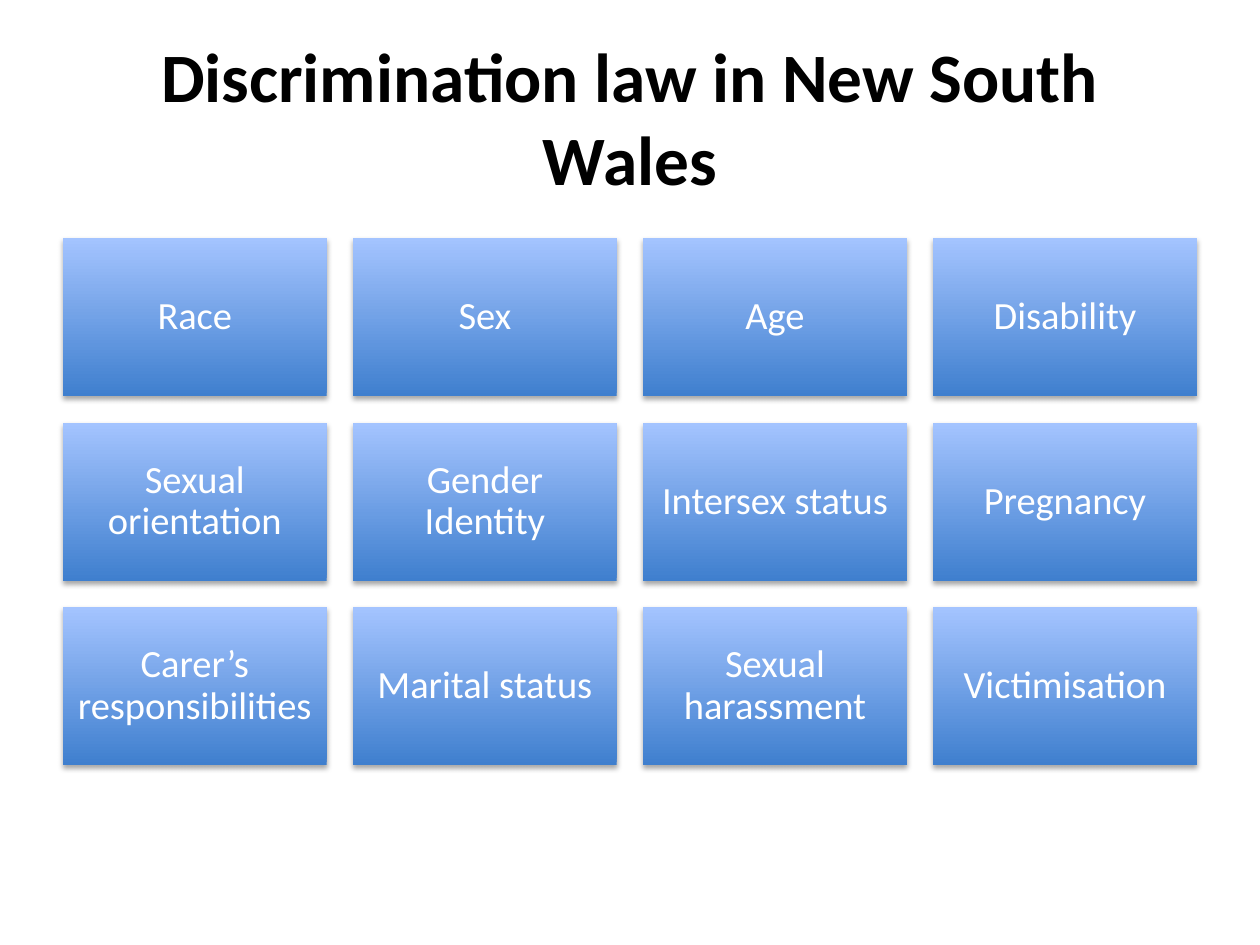
import pptx
import pptx.dml.color
import pptx.enum.shapes
import pptx.enum.text
import pptx.util
from lxml import etree

TITLE = "Discrimination law in New South Wales"
GROUNDS = [
    ["Race", "Sex", "Age", "Disability"],
    ["Sexual orientation", "Gender Identity", "Intersex status", "Pregnancy"],
    ["Carer’s responsibilities", "Marital status", "Sexual harassment", "Victimisation"],
]
COLORS = {"title": "000000", "tile_text": "FFFFFF", "bottom": "3F7FCE", "top": "A4C4FF", "shadow": "000000"}
TITLE_FONT = {"name": "Calibri", "size": pptx.util.Pt(39.6), "bold": True}
TILE_FONT = {"name": "Calibri", "size": pptx.util.Pt(22), "bold": False}
TITLE_PARA = {"alignment": pptx.enum.text.PP_ALIGN.CENTER}
TILE_PARA = {**TITLE_PARA, "line_spacing": 0.9}

PX = 914400 // 126
LEFT, WIDTH = 63, 1134
TITLE_TOP, TITLE_HEIGHT = 38, 157
GRID_TOP = 238
COLUMNS = len(GROUNDS[0])
TILE_WIDTH = WIDTH / (COLUMNS + (COLUMNS - 1) / 10)
TILE_HEIGHT = TILE_WIDTH * 0.6
GAP = TILE_WIDTH / 10
TILE_INSET = 11
DRAWING = "http://schemas.openxmlformats.org/drawingml/2006/main"


def px(*lengths):
    return [pptx.util.Emu(round(length * PX)) for length in lengths]


def apply(target, values):
    for name, value in values.items():
        setattr(target, name, value)


def write(box, text, font, para_format, color):
    apply(box.text_frame, {"word_wrap": True, "vertical_anchor": pptx.enum.text.MSO_ANCHOR.MIDDLE})
    para = box.text_frame.paragraphs[0]
    apply(para, para_format)
    span = para.add_run()
    span.text = text
    apply(span.font, font)
    span.font.color.rgb = pptx.dml.color.RGBColor.from_string(COLORS[color])


def add_shadow(shape):
    shape.shadow.inherit = False
    effects = shape._element.spPr.find(f"{{{DRAWING}}}effectLst")
    effects.append(etree.fromstring(
        f'<a:outerShdw xmlns:a="{DRAWING}" blurRad="40000" dist="23000" dir="5400000" rotWithShape="0">'
        f'<a:srgbClr val="{COLORS["shadow"]}"><a:alpha val="35000"/></a:srgbClr></a:outerShdw>'))


def add_tile(page, text, row, column):
    left = LEFT + column * (TILE_WIDTH + GAP)
    top = GRID_TOP + row * (TILE_HEIGHT + GAP)
    tile = page.shapes.add_shape(
        pptx.enum.shapes.MSO_SHAPE.RECTANGLE, *px(left, top, TILE_WIDTH, TILE_HEIGHT))
    tile.fill.gradient()
    tile.fill.gradient_angle = 90
    for stop, name in zip(tile.fill.gradient_stops, ("bottom", "top")):
        stop.color.rgb = pptx.dml.color.RGBColor.from_string(COLORS[name])
    tile.line.fill.background()
    add_shadow(tile)
    inset = px(TILE_INSET)[0]
    apply(tile.text_frame, {f"margin_{side}": inset for side in ("left", "top", "right", "bottom")})
    write(tile, text, TILE_FONT, TILE_PARA, "tile_text")


def main():
    deck = pptx.Presentation()
    deck.slide_width, deck.slide_height = px(1260, 945)
    page = deck.slides.add_slide(deck.slide_layouts[6])
    title = page.shapes.add_textbox(*px(LEFT, TITLE_TOP, WIDTH, TITLE_HEIGHT))
    write(title, TITLE, TITLE_FONT, TITLE_PARA, "title")
    for row, names in enumerate(GROUNDS):
        for column, name in enumerate(names):
            add_tile(page, name, row, column)
    deck.save("out.pptx")


if __name__ == "__main__":
    main()
